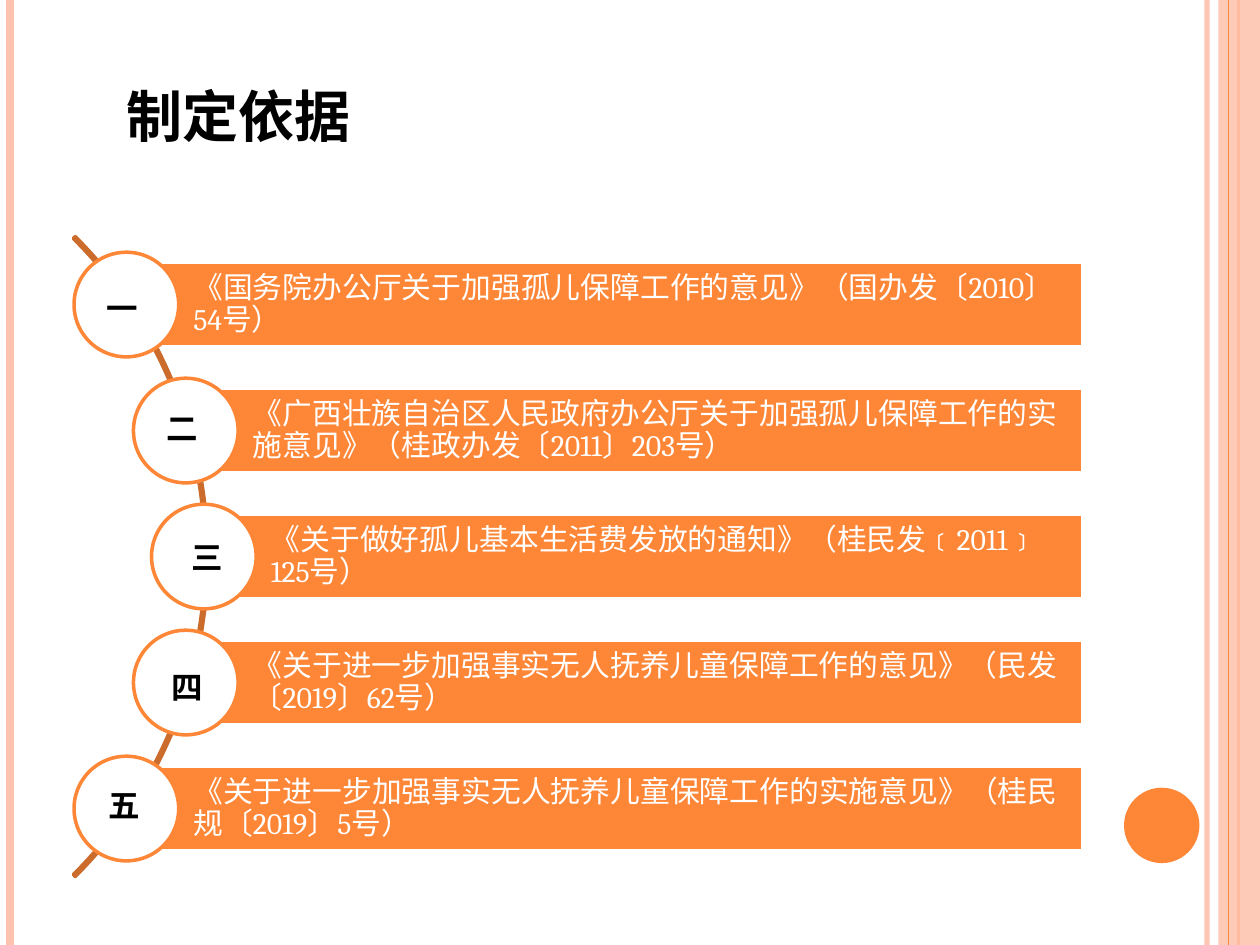
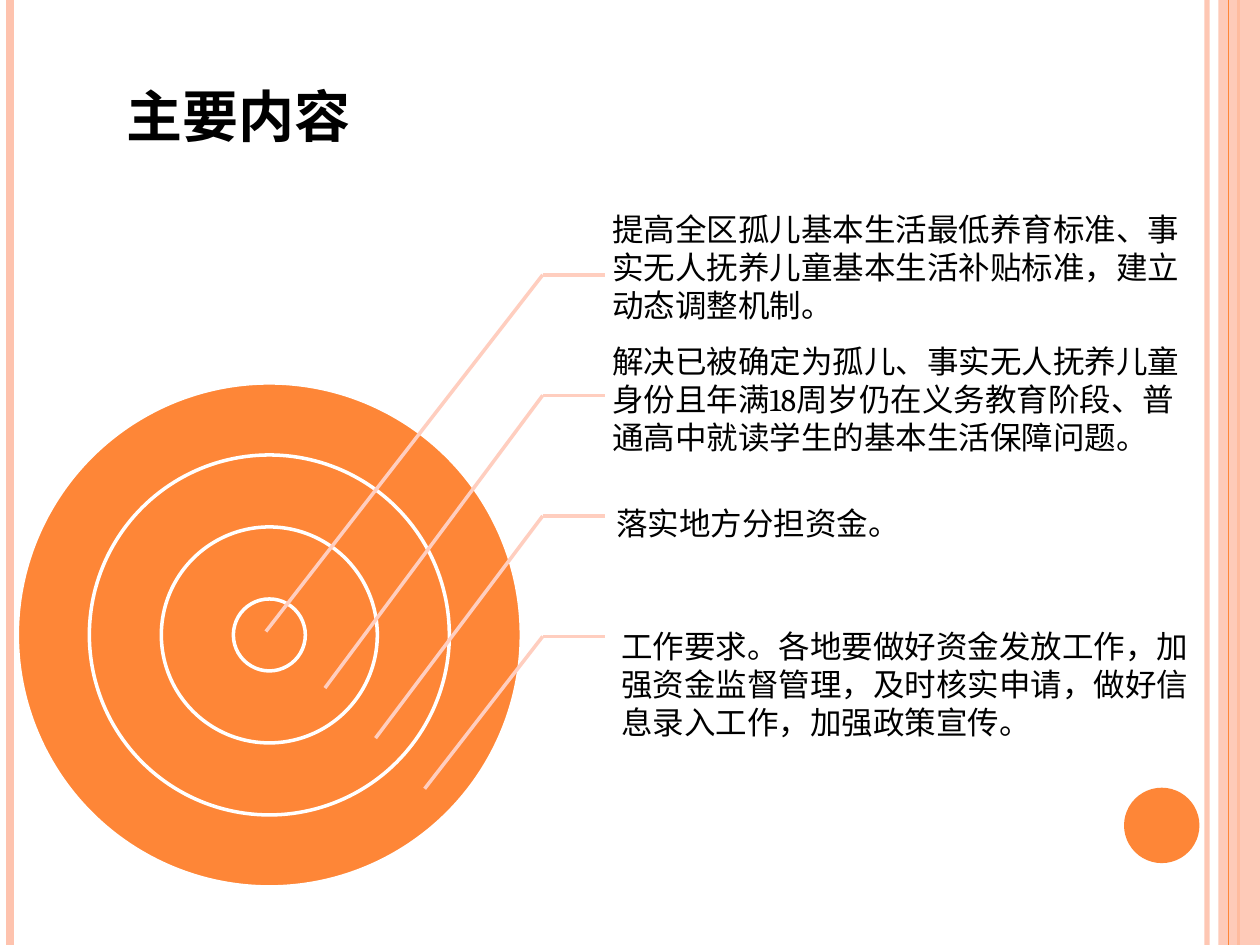
from math import sqrt

from pptx import Presentation
from pptx.dml.color import RGBColor
from pptx.enum.shapes import MSO_CONNECTOR, MSO_SHAPE
from pptx.enum.text import MSO_ANCHOR, PP_ALIGN
from pptx.oxml.ns import qn
from pptx.util import Cm, Pt
from lxml import etree

RECT = MSO_SHAPE.RECTANGLE
OVAL = MSO_SHAPE.OVAL
ARC = MSO_SHAPE.BLOCK_ARC
STRAIGHT = MSO_CONNECTOR.STRAIGHT
LEFT = PP_ALIGN.LEFT
MIDDLE = MSO_ANCHOR.MIDDLE

COLORS = {
    "orange": "FE8637",
    "peach": "FEC3AE",
    "pale": "FFCEBF",
    "rust": "CB6B2C",
    "white": "FFFFFF",
    "black": "000000",
}
FONT = "Cambria"
WIDE, HIGH = 25.4, 19.05

# Legal bases: numeral, its left and top, wording
BASES = [
    ("一", 1.9, 5.71, "《国务院办公厅关于加强孤儿保障工作的意见》（国办发〔2010〕54号）"),
    ("二", 3.1, 8.13, "《广西壮族自治区人民政府办公厅关于加强孤儿保障工作的实施意见》（桂政办发〔2011〕203号）"),
    ("三", 3.61, 10.72, "《关于做好孤儿基本生活费发放的通知》（桂民发﹝2011﹞125号）"),
    ("四", 3.2, 13.34, "《关于进一步加强事实无人抚养儿童保障工作的意见》（民发〔2019〕62号）"),
    ("五", 1.93, 15.72, "《关于进一步加强事实无人抚养儿童保障工作的实施意见》（桂民规〔2019〕5号）"),
]

# Main points: leader tip, then text box (left, top, width, height), wording
POINTS = [
    ((5.36, 12.73), (12.09, 4.11, 12.19, 2.57),
     "提高全区孤儿基本生活最低养育标准、事实无人抚养儿童基本生活补贴标准，建立动态调整机制。"),
    ((6.55, 13.87), (12.09, 6.78, 12.19, 2.57),
     "解决已被确定为孤儿、事实无人抚养儿童身份且年满18周岁仍在义务教育阶段、普通高中就读学生的基本生活保障问题。"),
    ((7.57, 14.88), (12.17, 10.03, 6.27, 1.02), "落实地方分担资金。"),
    ((8.56, 15.9), (12.27, 12.52, 12.04, 3.33),
     "工作要求。各地要做好资金发放工作，加强资金监督管理，及时核实申请，做好信息录入工作，加强政策宣传。"),
]


def rgb(name):
    return RGBColor.from_string(COLORS[name])


def fade(item, percent):
    """Make the first colour of a shape or line partly transparent."""
    color = item._element.spPr.find(".//" + qn("a:srgbClr"))
    etree.SubElement(color, qn("a:alpha")).set("val", str(percent * 1000))


def add_form(slide, kind, box, fill=None, line=None):
    form = slide.shapes.add_shape(kind, *map(Cm, box))
    form.shadow.inherit = False
    if fill:
        form.fill.solid()
        form.fill.fore_color.rgb = rgb(fill)
    else:
        form.fill.background()
    if line:
        form.line.color.rgb = rgb(line)
        form.line.width = Pt(2)
    else:
        form.line.fill.background()
    return form


def add_disc(slide, x, y, size, fill, line=None):
    """Add a circle around the centre x, y."""
    box = (x - size / 2, y - size / 2, size, size)
    return add_form(slide, OVAL, box, fill, line)


def add_line(slide, start, end, color, width):
    line = slide.shapes.add_connector(STRAIGHT, *map(Cm, (*start, *end)))
    line.line.color.rgb = rgb(color)
    line.line.width = Pt(width)
    etree.SubElement(line._element.spPr, qn("a:effectLst"))
    return line


def set_text(shape, text, size, color="black", bold=False):
    frame = shape.text_frame
    para = frame.paragraphs[0]
    para.text = text
    para.alignment = LEFT
    para.font.name = FONT
    para.font.size = Pt(size)
    para.font.bold = bold
    para.font.color.rgb = rgb(color)
    return frame, para


def add_text(slide, box, text, size=18, bold=False, wrap=False):
    label = slide.shapes.add_textbox(*map(Cm, box))
    frame, _ = set_text(label, text, size, bold=bold)
    frame.word_wrap = wrap


def add_bar(slide, box, text):
    bar = add_form(slide, RECT, box, "orange", "white")
    frame, para = set_text(bar, text, 17, "white")
    frame.word_wrap = True
    frame.vertical_anchor = MIDDLE
    frame.margin_left = Cm(1.35)
    frame.margin_right = frame.margin_top = frame.margin_bottom = Cm(0.13)
    para.line_spacing = 0.9


def add_rail(slide, x, color, width):
    return add_line(slide, (x, 0), (x, HIGH), color, width)


def add_page(deck, title):
    """Add a slide with the shared rails, dot and title."""
    slide = deck.slides.add_slide(deck.slide_layouts[6])
    fade(add_rail(slide, 24.33, "peach", 3), 93)
    add_rail(slide, 0.2, "peach", 4.5)
    add_rail(slide, 24.97, "orange", 1.5)
    fade(add_form(slide, RECT, (24.56, 0, 0.84, HIGH), "peach"), 87)
    add_rail(slide, 24.77, "orange", 0.75)
    add_disc(slide, 23.42, 16.64, 1.52, "orange")
    add_text(slide, (2.31, 1.52, 5.08, 1.63), title, 32, bold=True)
    return slide


def draw_bases(slide):
    mid_x, mid_y, size, reach = -4.93, 11.22, 18.24, 9.04
    step, bar_high, bar_end = 2.54, 1.7, 21.82

    # Curve behind the list
    box = (mid_x - size / 2, mid_y - size / 2, size, size)
    arc = add_form(slide, ARC, box, line="rust")
    for i, value in enumerate((189, 27, 0.003)):
        arc.adjustments[i] = value

    # Bars and discs, centred on the curve
    for i, (_, _, _, text) in enumerate(BASES):
        drop = (i - 2) * step
        x = mid_x + sqrt(reach ** 2 - drop ** 2)
        y = mid_y + drop
        add_bar(slide, (x, y - bar_high / 2, bar_end - x, bar_high), text)
        add_disc(slide, x, y, 2.11, "white", "orange")

    # Numerals
    for sign, left, top, _ in BASES:
        add_text(slide, (left, top, 1.17, 1.02), sign, bold=True)


def draw_points(slide):
    # Target rings, widths in the ratio 7 : 5 : 3 : 1
    for part in (7, 5, 3, 1):
        add_disc(slide, 5.43, 12.8, 10.16 * part / 7, "orange", "white")

    # Leaders and their wording
    for i, (tip, box, text) in enumerate(POINTS):
        y = 5.54 + i * 2.43
        bend = (10.94, y)
        add_line(slide, bend, (12.19, y), "pale", 2)
        add_line(slide, bend, tip, "pale", 2)
        add_text(slide, box, text, wrap=box[2] > 10)


def main():
    deck = Presentation()
    deck.slide_width, deck.slide_height = Cm(WIDE), Cm(HIGH)
    draw_bases(add_page(deck, "制定依据"))
    draw_points(add_page(deck, "主要内容"))
    deck.save("out.pptx")


if __name__ == "__main__":
    main()
